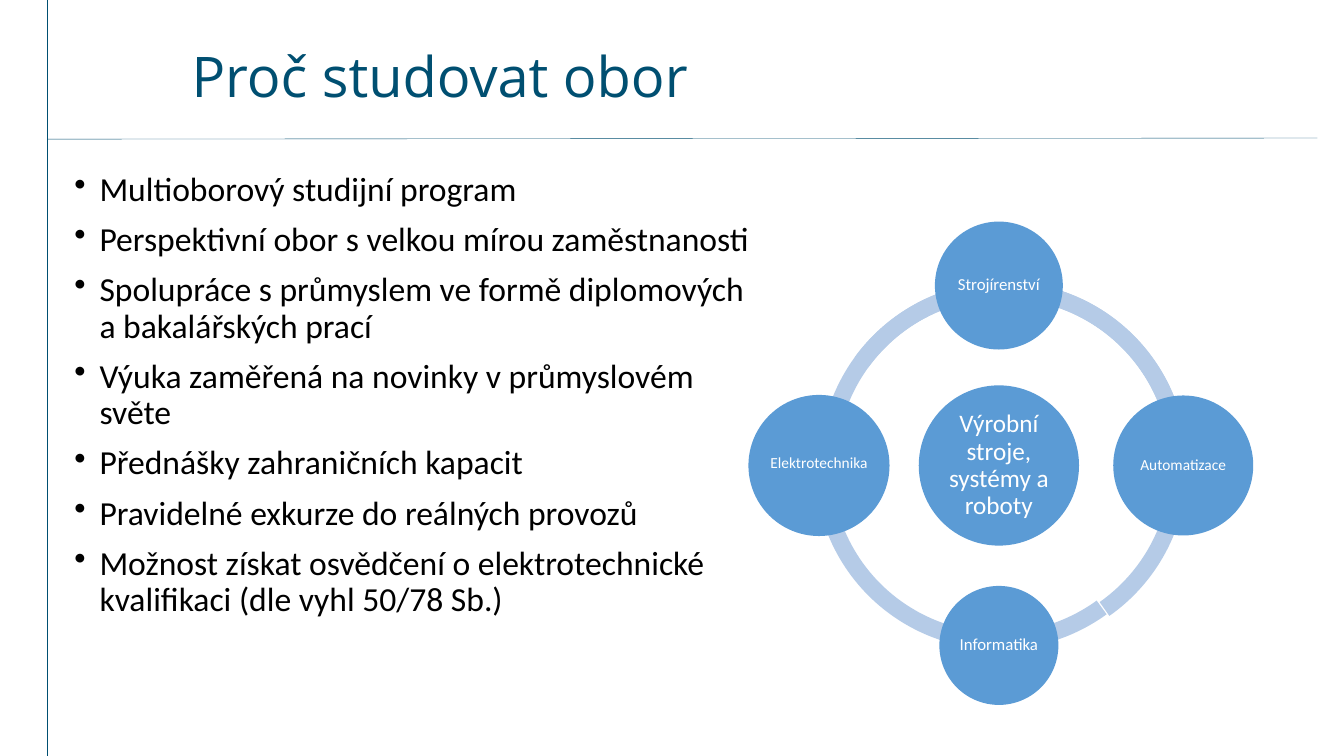
from typing import NamedTuple

import pptx
import pptx.dml.color
import pptx.enum.shapes
import pptx.enum.text
import pptx.oxml
import pptx.oxml.ns
import pptx.util
from pptx.util import Pt

PETROL = pptx.dml.color.RGBColor(0x00, 0x4F, 0x71)
BLACK = pptx.dml.color.RGBColor(0x00, 0x00, 0x00)
WHITE = pptx.dml.color.RGBColor(0xFF, 0xFF, 0xFF)
CIRCLE_BLUE = pptx.dml.color.RGBColor(0x5B, 0x9B, 0xD5)
RING_BLUE = pptx.dml.color.RGBColor(0xB5, 0xCB, 0xE7)

BODY_FONT = "Calibri"
TITLE_FONT = "Open Sans"
HUB_X, HUB_Y = 713.5, 332.5
ORBIT = 128.5
RING_SIZE = 262.8
RING_THICKNESS = 0.046
DEGREE = 0.6  # one degree in adjustment units
BULLET_INDENT = 18

REASONS = (
    "Multioborový studijní program",
    "Perspektivní obor s velkou mírou zaměstnanosti",
    "Spolupráce s průmyslem ve formě diplomových a bakalářských prací",
    "Výuka zaměřená na novinky v průmyslovém světe",
    "Přednášky zahraničních kapacit",
    "Pravidelné exkurze do reálných provozů",
    "Možnost získat osvědčení o elektrotechnické kvalifikaci (dle vyhl 50/78 Sb.)",
)


class Rule(NamedTuple):
    start_x: float
    start_y: float
    end_x: float
    end_y: float


class Arc(NamedTuple):
    left: float
    start: float
    end: float


class Circle(NamedTuple):
    text: str
    center_x: float
    center_y: float
    diameter: float
    font_size: float
    side_margin: float = 1.5
    top_margin: float = 1.5
    bottom_margin: float = 1.5


RULES = (
    Rule(34, 540, 34, 0),
    Rule(34, 99.4, 941, 98.6),
)
ARCS = (
    Arc(581.8, 108, 162),
    Arc(581.8, 54, 108),
    Arc(585.4, 215.99, 54.85),
    Arc(585.4, 161.15, 0.01),
)
CIRCLES = (
    Circle("Výrobní stroje, systémy a roboty", HUB_X, HUB_Y, 114.5, 18, 2.2, 2.2, 2.2),
    Circle("Strojírenství", HUB_X, HUB_Y - ORBIT, 91.4, 12),
    Circle("Automatizace", HUB_X + ORBIT + 3.2, HUB_Y, 100, 11),
    Circle("Informatika", HUB_X, HUB_Y + ORBIT, 85, 12),
    Circle("Elektrotechnika", HUB_X - ORBIT, HUB_Y, 100.8, 11, 0, 0, 2.9),
)


def format_title(slide: pptx.slide.Slide) -> None:
    title = slide.shapes.title
    title.left, title.top, title.width, title.height = Pt(129.6), Pt(26), Pt(432.7), Pt(55.5)
    frame = title.text_frame
    frame.text = "Proč studovat obor"
    frame.word_wrap = True
    frame.auto_size = pptx.enum.text.MSO_AUTO_SIZE.NONE
    frame.vertical_anchor = pptx.enum.text.MSO_ANCHOR.TOP
    paragraph = frame.paragraphs[0]
    paragraph.alignment = pptx.enum.text.PP_ALIGN.LEFT
    paragraph.space_before = Pt(0)
    paragraph.font.name = TITLE_FONT
    paragraph.font.size = Pt(40)
    paragraph.font.color.rgb = PETROL


def add_rule(slide: pptx.slide.Slide, rule: Rule) -> None:
    connector = slide.shapes.add_connector(
        pptx.enum.shapes.MSO_CONNECTOR.STRAIGHT, *(Pt(value) for value in rule)
    )
    connector.line.color.rgb = PETROL
    connector.line.width = Pt(0.25)
    properties = connector._element.spPr
    properties.append(pptx.oxml.parse_xml(f"<a:effectLst {pptx.oxml.ns.nsdecls('a')}/>"))


def add_bullet(paragraph: pptx.text.text._Paragraph) -> None:
    properties = paragraph._p.get_or_add_pPr()
    properties.set("marL", str(Pt(BULLET_INDENT)))
    properties.set("indent", str(-Pt(BULLET_INDENT)))
    properties.append(
        pptx.oxml.parse_xml(f'<a:buChar {pptx.oxml.ns.nsdecls("a")} char="•"/>')
    )


def add_reasons(slide: pptx.slide.Slide) -> None:
    frame = slide.shapes.add_textbox(Pt(46), Pt(119.5), Pt(507.6), Pt(381)).text_frame
    frame.word_wrap = True
    for index, reason in enumerate(REASONS):
        paragraph = frame.add_paragraph() if index else frame.paragraphs[0]
        paragraph.text = reason
        add_bullet(paragraph)
        paragraph.line_spacing = 0.9
        paragraph.space_before = Pt(10 if index else 0)
        paragraph.font.name = BODY_FONT
        paragraph.font.size = Pt(24)
        paragraph.font.color.rgb = BLACK


def add_plain_shape(
    slide: pptx.slide.Slide,
    kind: pptx.enum.shapes.MSO_SHAPE,
    left: float,
    top: float,
    size: float,
    color: pptx.dml.color.RGBColor,
) -> pptx.shapes.autoshape.Shape:
    """Add a square-framed shape with a solid fill, no outline and no shadow."""
    shape = slide.shapes.add_shape(kind, Pt(left), Pt(top), Pt(size), Pt(size))
    shape.shadow.inherit = False
    shape.fill.solid()
    shape.fill.fore_color.rgb = color
    shape.line.fill.background()
    return shape


def add_arc(slide: pptx.slide.Slide, arc: Arc) -> None:
    shape = add_plain_shape(
        slide, pptx.enum.shapes.MSO_SHAPE.BLOCK_ARC,
        arc.left, HUB_Y - RING_SIZE / 2, RING_SIZE, RING_BLUE,
    )
    shape.adjustments[0] = arc.start * DEGREE
    shape.adjustments[1] = arc.end * DEGREE
    shape.adjustments[2] = RING_THICKNESS


def add_circle(slide: pptx.slide.Slide, circle: Circle) -> None:
    radius = circle.diameter / 2
    shape = add_plain_shape(
        slide, pptx.enum.shapes.MSO_SHAPE.OVAL,
        circle.center_x - radius, circle.center_y - radius, circle.diameter, CIRCLE_BLUE,
    )
    frame = shape.text_frame
    frame.text = circle.text
    frame.word_wrap = True
    frame.vertical_anchor = pptx.enum.text.MSO_ANCHOR.MIDDLE
    frame.margin_left = frame.margin_right = Pt(circle.side_margin)
    frame.margin_top = Pt(circle.top_margin)
    frame.margin_bottom = Pt(circle.bottom_margin)
    paragraph = frame.paragraphs[0]
    paragraph.alignment = pptx.enum.text.PP_ALIGN.CENTER
    paragraph.line_spacing = 0.9
    paragraph.font.name = BODY_FONT
    paragraph.font.size = Pt(circle.font_size)
    paragraph.font.color.rgb = WHITE


def main() -> None:
    presentation = pptx.Presentation()
    presentation.slide_width = Pt(960)
    presentation.slide_height = Pt(540)
    title_only = presentation.slide_layouts.get_by_name("Title Only")
    slide = presentation.slides.add_slide(title_only)
    format_title(slide)
    for rule in RULES:
        add_rule(slide, rule)
    add_reasons(slide)
    for arc in ARCS:
        add_arc(slide, arc)
    for circle in CIRCLES:
        add_circle(slide, circle)
    presentation.save("out.pptx")


if __name__ == "__main__":
    main()
